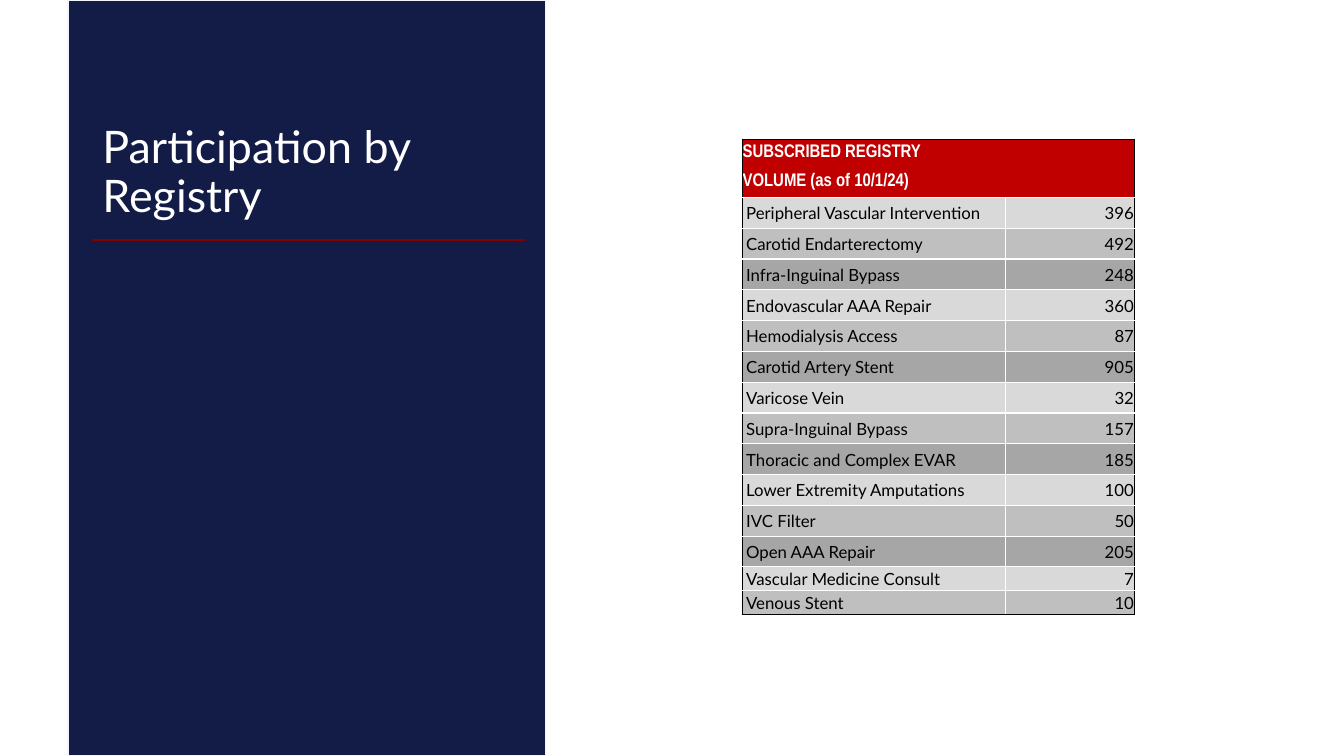
from lxml.etree import SubElement
from pptx import Presentation
from pptx.dml.color import RGBColor
from pptx.enum.shapes import MSO_CONNECTOR, MSO_SHAPE
from pptx.enum.text import MSO_ANCHOR, MSO_AUTO_SIZE, PP_ALIGN
from pptx.oxml.ns import qn
from pptx.util import Emu, Pt

PX = 6350  # 144 px to the inch
COLORS = {
    "navy": "131C47", "panel_edge": "F1F5F8", "rule": "800000",
    "header": "C00000", "white": "FFFFFF", "black": "000000",
}
ROW_FILLS = ["D9D9D9", "BFBFBF", "A6A6A6"]
HEADER = ["SUBSCRIBED REGISTRY", "VOLUME (as of 10/1/24)"]
REGISTRIES = [
    ("Peripheral Vascular Intervention", 396),
    ("Carotid Endarterectomy", 492),
    ("Infra-Inguinal Bypass", 248),
    ("Endovascular AAA Repair", 360),
    ("Hemodialysis Access", 87),
    ("Carotid Artery Stent", 905),
    ("Varicose Vein", 32),
    ("Supra-Inguinal Bypass", 157),
    ("Thoracic and Complex EVAR", 185),
    ("Lower Extremity Amputations", 100),
    ("IVC Filter", 50),
    ("Open AAA Repair", 205),
    ("Vascular Medicine Consult", 7),
    ("Venous Stent", 10),
]
COLUMN_WIDTHS = [377, 184]
ROW_HEIGHTS = [38, 39] + [44] * 12 + [34] * 2
OUTER = ("black", 0.5)
INNER = ("white", 1)


def px(length):
    return Emu(length * PX)


def rgb(name):
    return RGBColor.from_string(COLORS.get(name, name))


def set_font(paragraph, name, size, color, bold=False):
    font = paragraph.font
    font.name, font.size, font.bold = name, Pt(size), bold
    font.color.rgb = rgb(color)


def add_title_panel(page, left, top, width, height):
    panel = page.shapes.add_shape(
        MSO_SHAPE.RECTANGLE, px(left), px(top), px(width), px(height))
    panel.shadow.inherit = False
    panel.fill.solid()
    panel.fill.fore_color.rgb = rgb("navy")
    panel.line.color.rgb = rgb("panel_edge")
    panel.line.width = Pt(1)

    text_left, text_width, rule_top = left + 35, 620, top + 343
    rule = page.shapes.add_connector(
        MSO_CONNECTOR.STRAIGHT, px(text_left), px(rule_top),
        px(text_left + text_width), px(rule_top))
    rule.line.color.rgb = rgb("rule")
    rule.line.width = Pt(1.75)
    SubElement(rule.element.spPr, qn("a:effectLst"))

    title = page.shapes.title
    rule.element.addnext(title.element)
    title.left, title.top = px(text_left), px(top + 72)
    title.width, title.height = px(text_width), px(252)
    frame = title.text_frame
    frame.text = "Participation by Registry"
    frame.word_wrap = True
    frame.auto_size = MSO_AUTO_SIZE.NONE
    frame.vertical_anchor = MSO_ANCHOR.BOTTOM
    paragraph = frame.paragraphs[0]
    paragraph.alignment = PP_ALIGN.LEFT
    paragraph.line_spacing = 0.9
    set_font(paragraph, "Lato", 32, "white")


def set_borders(cell, **edges):
    """Draw the L, R, T and B edges as (color, points); None hides an edge."""
    properties = cell._tc.get_or_add_tcPr()
    for side in "LRTB":
        line = SubElement(properties, qn(f"a:ln{side}"))
        if edges[side] is None:
            SubElement(line, qn("a:noFill"))
            continue
        color, points = edges[side]
        line.set("w", str(Pt(points)))
        fill = SubElement(line, qn("a:solidFill"))
        SubElement(fill, qn("a:srgbClr")).set("val", COLORS[color])


def format_cell(cell, fill, margin_left=1):
    cell.fill.solid()
    cell.fill.fore_color.rgb = rgb(fill)
    cell.vertical_anchor = MSO_ANCHOR.MIDDLE
    cell.margin_left, cell.margin_right = px(margin_left), px(1)
    cell.margin_top, cell.margin_bottom = px(1), px(0)


def add_registry_table(page, left, top):
    frame = page.shapes.add_table(
        len(ROW_HEIGHTS), len(COLUMN_WIDTHS), px(left), px(top),
        px(sum(COLUMN_WIDTHS)), px(sum(ROW_HEIGHTS)))
    table = frame.table
    table.first_row = table.horz_banding = False
    for column, width in zip(table.columns, COLUMN_WIDTHS):
        column.width = px(width)
    for row, height in zip(table.rows, ROW_HEIGHTS):
        row.height = px(height)

    for index, text in enumerate(HEADER):
        label, blank = table.cell(index, 0), table.cell(index, 1)
        label.text = text
        set_font(label.text_frame.paragraphs[0], "Arial Narrow", 13, "white", True)
        above = OUTER if index == 0 else None
        below = INNER if index == len(HEADER) - 1 else None
        set_borders(label, L=OUTER, R=None, T=above, B=below)
        set_borders(blank, L=None, R=OUTER, T=above, B=below)
        format_cell(label, "header")
        format_cell(blank, "header")
    table.cell(0, 1).merge(table.cell(len(HEADER) - 1, 1))

    for index, (registry, volume) in enumerate(REGISTRIES):
        label = table.cell(len(HEADER) + index, 0)
        count = table.cell(len(HEADER) + index, 1)
        label.text, count.text = registry, str(volume)
        below = OUTER if index == len(REGISTRIES) - 1 else INNER
        set_borders(label, L=OUTER, R=INNER, T=INNER, B=below)
        set_borders(count, L=INNER, R=OUTER, T=INNER, B=below)
        fill = ROW_FILLS[index % len(ROW_FILLS)]
        format_cell(label, fill, margin_left=6)
        format_cell(count, fill)
        for cell in (label, count):
            set_font(cell.text_frame.paragraphs[0], "Lato", 12, "black")
        count.text_frame.paragraphs[0].alignment = PP_ALIGN.RIGHT


def main():
    deck = Presentation()
    deck.slide_width, deck.slide_height = px(1920), px(1080)
    page = deck.slides.add_slide(deck.slide_layouts[5])
    add_title_panel(page, 97, 0, 682, 1080)
    add_registry_table(page, 1060, 199)
    deck.save("out.pptx")


if __name__ == "__main__":
    main()
